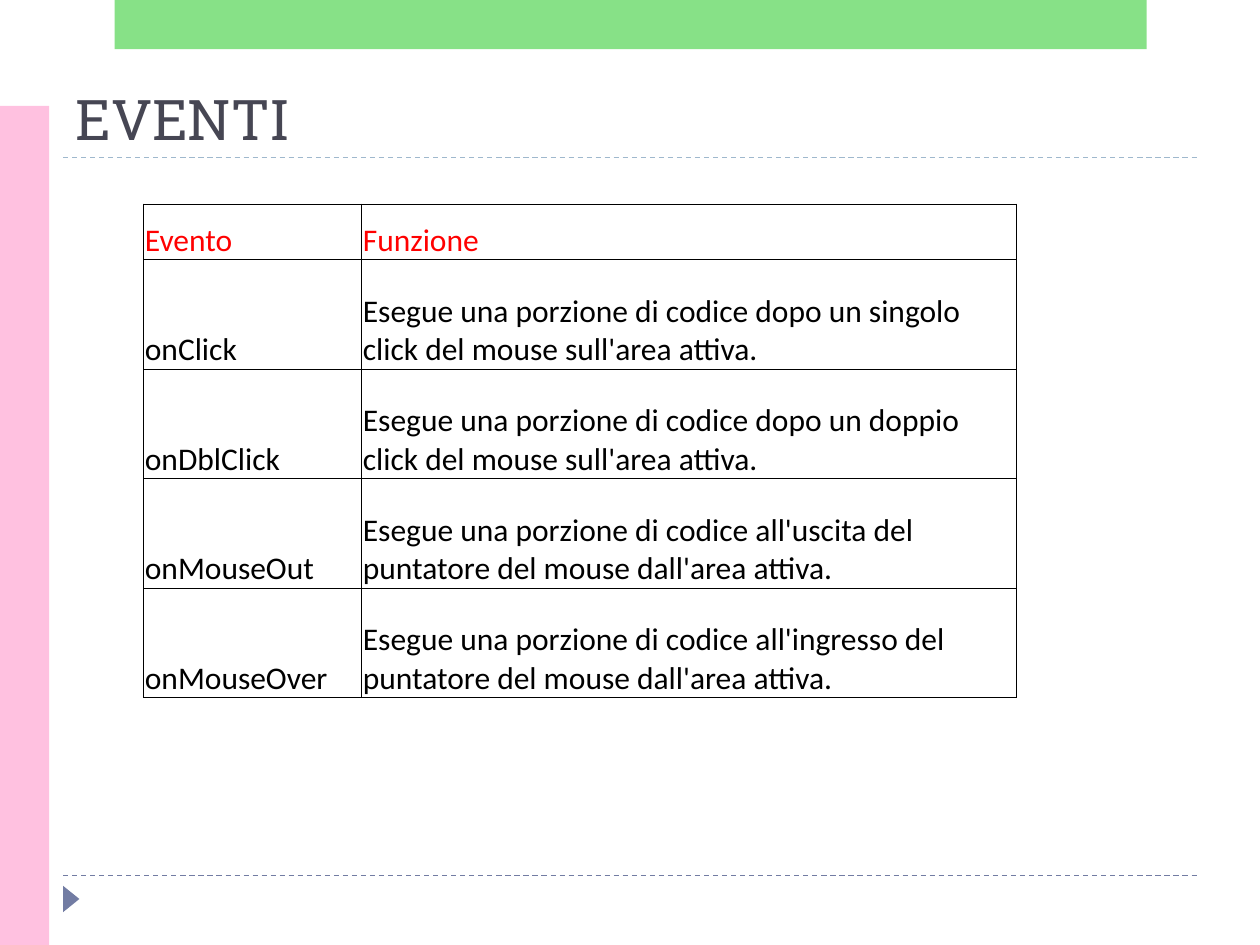
from dataclasses import dataclass

from lxml.etree import SubElement
from pptx import Presentation
from pptx.dml.color import RGBColor
from pptx.enum.dml import MSO_LINE
from pptx.enum.shapes import MSO_CONNECTOR, MSO_SHAPE
from pptx.enum.text import MSO_ANCHOR
from pptx.oxml.ns import qn
from pptx.util import Inches, Pt

WIDTH, HEIGHT = 10, 7.5
MARGIN = 0.05 * WIDTH
BAND = 0.39


@dataclass(frozen=True)
class Theme:
    accent: str = "727CA3"
    rule: str = "9FB8CD"
    pink: str = "FFC1E0"
    green: str = "62D862"
    title: str = "464653"
    header: str = "FF0000"
    ink: str = "000000"
    title_font: str = "Roboto Slab"
    body_font: str = "Calibri"
    title_size: int = 32
    body_size: int = 18


THEME = Theme()

COLUMNS = [1.73, 5.2]
HEADER_HEIGHT, ROW_HEIGHT = 0.44, 0.87
EVENTS = [
    ("Evento", "Funzione"),
    ("onClick", "Esegue una porzione di codice dopo un singolo click del mouse sull'area attiva."),
    ("onDblClick", "Esegue una porzione di codice dopo un doppio click del mouse sull'area attiva."),
    ("onMouseOut", "Esegue una porzione di codice all'uscita del puntatore del mouse dall'area attiva."),
    ("onMouseOver", "Esegue una porzione di codice all'ingresso del puntatore del mouse dall'area attiva."),
]


def write(paragraph, text, font, size, color):
    paragraph.text = text
    paragraph.font.name = font
    paragraph.font.size = Pt(size)
    paragraph.font.color.rgb = RGBColor.from_string(color)


def add_rule(slide, y, color):
    rule = slide.shapes.add_connector(
        MSO_CONNECTOR.STRAIGHT, Inches(MARGIN), Inches(y), Inches(WIDTH - MARGIN), Inches(y))
    rule.line.color.rgb = RGBColor.from_string(color)
    rule.line.width = Pt(0.75)
    rule.line.dash_style = MSO_LINE.DASH
    SubElement(rule._element.spPr, qn("a:effectLst"))


def add_block(slide, kind, box, color, opacity=100):
    shape = slide.shapes.add_shape(kind, *map(Inches, box))
    shape.shadow.inherit = False
    shape.line.fill.background()
    shape.fill.solid()
    shape.fill.fore_color.rgb = RGBColor.from_string(color)
    if opacity < 100:
        color_element = shape._element.spPr.find(".//" + qn("a:srgbClr"))
        SubElement(color_element, qn("a:alpha"), val=str(opacity * 1000))
    return shape


def add_title(slide, text):
    box = slide.shapes.add_textbox(
        Inches(MARGIN), Inches(0.55), Inches(WIDTH - 2 * MARGIN), Inches(0.7))
    frame = box.text_frame
    frame.word_wrap = True
    frame.vertical_anchor = MSO_ANCHOR.BOTTOM
    write(frame.paragraphs[0], text, THEME.title_font, THEME.title_size, THEME.title)


def add_borders(cell):
    properties = cell._tc.get_or_add_tcPr()
    for position, side in enumerate(("lnL", "lnR", "lnT", "lnB")):
        border = properties.makeelement(qn(f"a:{side}"), {"w": str(Pt(0.5))})
        fill = SubElement(border, qn("a:solidFill"))
        SubElement(fill, qn("a:srgbClr"), val=THEME.ink)
        properties.insert(position, border)


def style_cell(cell, text, color):
    cell.fill.background()
    cell.vertical_anchor = MSO_ANCHOR.BOTTOM
    cell.margin_left = cell.margin_right = cell.margin_top = Inches(0.01)
    cell.margin_bottom = 0
    write(cell.text_frame.paragraphs[0], text, THEME.body_font, THEME.body_size, color)
    add_borders(cell)


def add_event_table(slide, left, top):
    heights = [HEADER_HEIGHT] + [ROW_HEIGHT] * (len(EVENTS) - 1)
    table = slide.shapes.add_table(
        len(EVENTS), len(COLUMNS), Inches(left), Inches(top),
        Inches(sum(COLUMNS)), Inches(sum(heights))).table
    for column, width in zip(table.columns, COLUMNS):
        column.width = Inches(width)
    for row, height, texts in zip(table.rows, heights, EVENTS):
        row.height = Inches(height)
        color = THEME.header if texts is EVENTS[0] else THEME.ink
        for cell, text in zip(row.cells, texts):
            style_cell(cell, text, color)


def main():
    presentation = Presentation()
    presentation.slide_width = Inches(WIDTH)
    presentation.slide_height = Inches(HEIGHT)
    slide = presentation.slides.add_slide(presentation.slide_layouts[6])

    # Dashed rules and footer marker
    add_rule(slide, 6.95, THEME.accent)
    add_rule(slide, 1.25, THEME.rule)
    marker = add_block(slide, MSO_SHAPE.ISOSCELES_TRIANGLE, (0.46, 7.07, 0.21, 0.13), THEME.accent)
    marker.rotation = 90

    # Side and top bands
    add_block(slide, MSO_SHAPE.RECTANGLE, (0, 0.84, BAND, HEIGHT - 0.84), THEME.pink)
    add_block(slide, MSO_SHAPE.RECTANGLE, (0.91, 0, 8.19, BAND), THEME.green, opacity=76)

    # Content
    add_title(slide, "EVENTI")
    add_event_table(slide, 1.14, 1.62)

    presentation.save("out.pptx")


if __name__ == "__main__":
    main()
